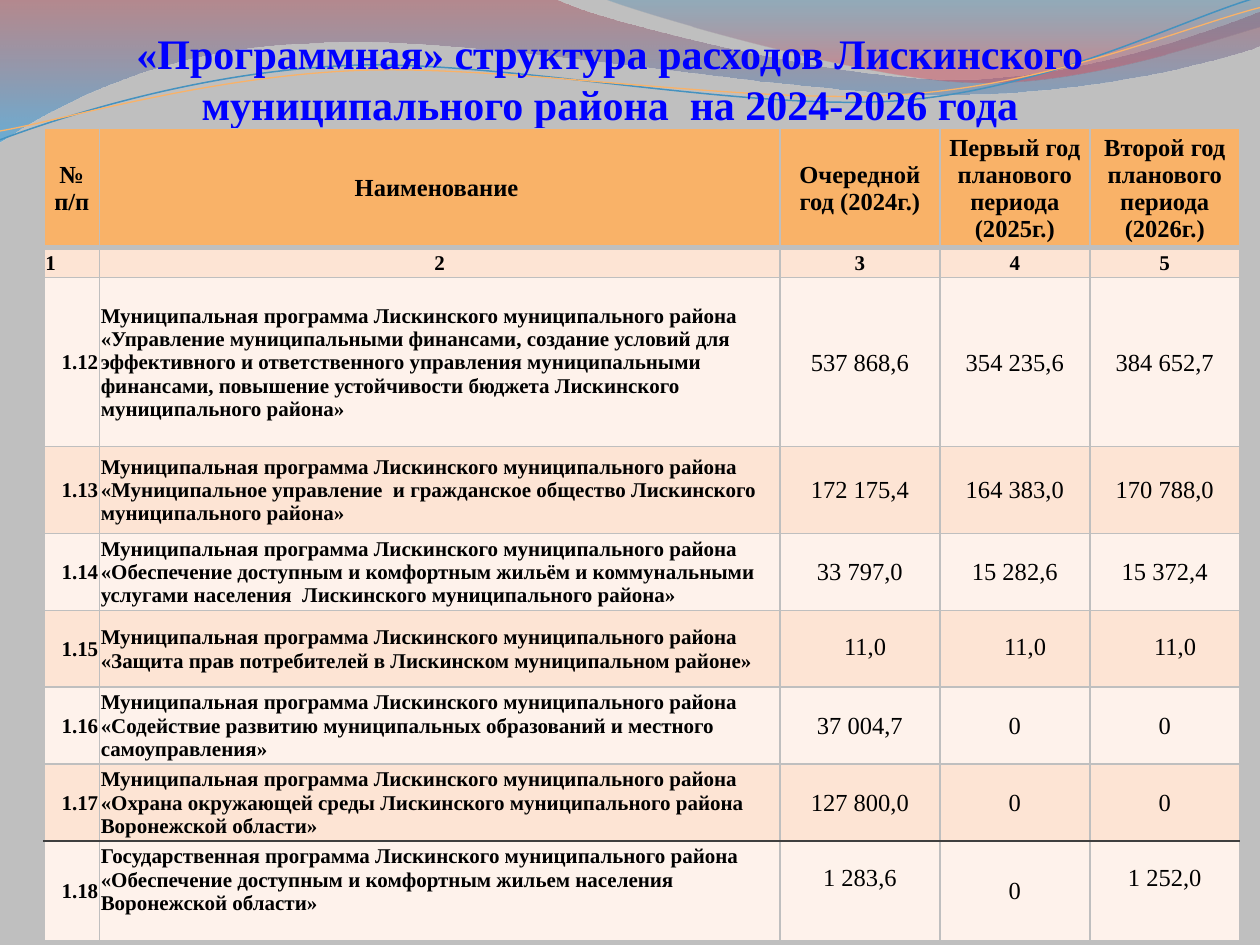
import pptx
import pptx.util
import pptx.dml.color
import pptx.enum.text
import pptx.oxml
import pptx.oxml.ns
from lxml import etree

Inches = pptx.util.Inches
Pt = pptx.util.Pt
RGB = pptx.dml.color.RGBColor
Align = pptx.enum.text.PP_ALIGN
Anchor = pptx.enum.text.MSO_ANCHOR
qn = pptx.oxml.ns.qn

GREY = RGB(0xBF, 0xBF, 0xBF)
DARK = RGB(0x3F, 0x3F, 0x3F)
BLACK = RGB(0, 0, 0)
BLUE = RGB(0, 0, 0xFF)
ORANGE = RGB(0xF9, 0xB2, 0x68)
PEACH = RGB(0xFD, 0xE4, 0xD4)
CREAM = RGB(0xFE, 0xF2, 0xEB)
ROSE = RGB(0xA8, 0x47, 0x52)
SKY = RGB(0x24, 0x9F, 0xE6)
SEA = RGB(0x2A, 0x7E, 0xAF)
RED = RGB(0xD2, 0x4B, 0x5A)
STEEL = RGB(0x45, 0x92, 0xBF)
FONT = "Times New Roman"


def write(frame, text, size=12, bold=True, color=BLACK, align=Align.LEFT):
    par = frame.paragraphs[0]
    par.alignment = align
    run = par.add_run()
    run.text = text
    run.font.name = FONT
    run.font.size = Pt(size)
    run.font.bold = bold
    run.font.color.rgb = color


class Deck:
    def __init__(self, wide, high):
        self.show = pptx.Presentation()
        self.show.slide_width = Inches(wide)
        self.show.slide_height = Inches(high)
        self.slide = self.show.slides.add_slide(self.show.slide_layouts[6])
        self.slide.background.fill.solid()
        self.slide.background.fill.fore_color.rgb = GREY

    def outline(self, start, parts, close):
        """Draw lines (2 numbers) and cubic curves (6 numbers) from start."""
        dots = [(Inches(p[i]), Inches(p[i + 1])) for p in parts for i in range(0, len(p), 2)]
        pen = self.slide.shapes.build_freeform(*map(Inches, start), scale=1.0)
        pen.add_line_segments(dots, close=close)
        shape = pen.convert_to_shape()
        shape.shadow.inherit = False
        # Join each three points of a curve into one segment
        legs = iter(list(shape._element.iter(qn("a:lnTo"))))
        for part in parts:
            first = next(legs)
            if len(part) == 6:
                first.tag = qn("a:cubicBezTo")
                for _ in range(2):
                    leg = next(legs)
                    first.append(leg[0])
                    leg.getparent().remove(leg)
        return shape

    def wave(self, start, parts, stops):
        shape = self.outline(start, parts, True)
        shape.line.fill.background()
        shape.fill.gradient()
        shape.fill.gradient_angle = 270
        for stop, (place, color, alpha) in zip(shape.fill.gradient_stops, stops):
            stop.position = place
            stop.color.rgb = color
        tags = list(shape._element.spPr.iter(qn("a:srgbClr")))
        for tag, (_, _, alpha) in zip(tags, stops):
            etree.SubElement(tag, qn("a:alpha")).set("val", str(alpha * 1000))

    def curve(self, start, parts, color, width):
        shape = self.outline(start, parts, False)
        shape.fill.background()
        shape.line.color.rgb = color
        shape.line.width = Pt(width)

    def title(self, text, left, top, wide, high):
        box = self.slide.shapes.add_textbox(*map(Inches, (left, top, wide, high)))
        frame = box.text_frame
        frame.word_wrap = True
        frame.vertical_anchor = Anchor.BOTTOM
        frame.margin_left = frame.margin_right = frame.margin_bottom = 0
        write(frame, text, size=24, color=BLUE, align=Align.CENTER)

    def grid(self, left, top, cols, rows):
        size = map(Inches, (left, top, sum(cols), sum(rows)))
        table = self.slide.shapes.add_table(len(rows), len(cols), *size).table
        table.first_row = table.horz_banding = False
        for col, wide in zip(table.columns, cols):
            col.width = Inches(wide)
        for row, high in zip(table.rows, rows):
            row.height = Inches(high)
        return table

    def cell(self, cell, text, fill, edges, left=0.01, low=0, anchor=Anchor.MIDDLE, **look):
        cell.margin_left = Inches(left)
        cell.margin_top = cell.margin_right = Inches(0.01)
        cell.margin_bottom = Inches(low)
        cell.vertical_anchor = anchor
        write(cell.text_frame, text, **look)
        cell.fill.solid()
        cell.fill.fore_color.rgb = fill
        props = cell._tc.get_or_add_tcPr()
        for i, side in enumerate("LRTB"):
            color, width = edges.get(side, (GREY, 1))
            props.insert(i, pptx.oxml.parse_xml(
                f'<a:ln{side} {pptx.oxml.ns.nsdecls("a")} w="{Pt(width)}"><a:solidFill>'
                f'<a:srgbClr val="{color}"/></a:solidFill></a:ln{side}>'))


HEAD = ["№ п/п", "Наименование ", "Очередной год (2024г.)",
        "Первый год планового периода (2025г.)", "Второй год планового периода (2026г.)"]
LOCAL = "Муниципальная программа Лискинского муниципального района "
STATE = "Государственная программа Лискинского муниципального района "
PLANS = [
    (LOCAL + "«Управление муниципальными финансами, создание условий для эффективного и "
     "ответственного управления муниципальными финансами, повышение устойчивости бюджета "
     "Лискинского муниципального района»", "537 868,6", "354 235,6", "384 652,7"),
    (LOCAL + "«Муниципальное управление  и гражданское общество Лискинского муниципального "
     "района»", "172 175,4", "164 383,0", "170 788,0"),
    (LOCAL + "«Обеспечение доступным и комфортным жильём и коммунальными услугами населения  "
     "Лискинского муниципального района»", "33 797,0", "15 282,6", "15 372,4"),
    (LOCAL + "«Защита прав потребителей в Лискинском муниципальном районе»",
     "11,0", "11,0", "11,0"),
    (LOCAL + "«Содействие развитию муниципальных образований и местного самоуправления»",
     "37 004,7", "0", "0"),
    (LOCAL + "«Охрана окружающей среды Лискинского муниципального района Воронежской области»",
     "127 800,0", "0", "0"),
    (STATE + "«Обеспечение доступным и комфортным жильем населения Воронежской области»",
     "1 283,6", "0", "1 252,0"),
]
COLS = [0.44, 5.4, 1.27, 1.19, 1.19]
ROWS = [0.88, 0.24, 1.34, 0.69, 0.61, 0.61, 0.5, 0.5, 0.7]


def main():
    deck = Deck(10, 7.5)

    # Waves and thin curves along the top
    deck.wave((0, 0), [(4.4, -0.01), (4.76, 0.17, 6.64, 0.63, 7.58, 0.63),
                       (8.53, 0.63, 9.58, 0.26, 10, 0.09), (10.01, 0.36),
                       (9.83, 0.44, 8.7, 0.76, 7.46, 0.75),
                       (6.22, 0.75, 3.82, 0.28, 2.57, 0.34),
                       (1.29, 0.36, 0.46, 0.83, -0.01, 1.13)],
              [(0, ROSE, 45), (1, SKY, 55)])
    deck.wave((4.79, -0.01), [(5.09, 0.11, 6.82, 0.62, 7.69, 0.65),
                              (8.56, 0.69, 9.61, 0.32, 10, 0.21), (10, 0)],
              [(0, SEA, 30), (0.8, RED, 45)])
    deck.curve((0, 1.11), [(0.48, 0.93, 1.58, 0.57, 2.77, 0.52),
                           (3.95, 0.47, 5.93, 0.89, 7.13, 0.8),
                           (8.33, 0.71, 9.38, 0.15, 9.98, -0.02)], STEEL, 0.85)
    deck.curve((0, 1.04), [(0.47, 0.96, 1.64, 0.61, 2.83, 0.56),
                           (4.03, 0.51, 5.97, 0.84, 7.17, 0.75),
                           (8.36, 0.67, 9.41, 0.21, 10, 0.06)], ORANGE, 0.75)

    # Title
    deck.title("«Программная» структура расходов Лискинского муниципального района  "
               "на 2024-2026 года", 0.23, 0.24, 9.22, 0.78)

    # Table heading and column numbers
    table = deck.grid(0.35, 1.02, COLS, ROWS)
    thick = (GREY, 3)
    for c, text in enumerate(HEAD):
        deck.cell(table.cell(0, c), text, ORANGE, {"B": thick}, size=14, align=Align.CENTER)
        deck.cell(table.cell(1, c), str(c + 1), PEACH, {"T": thick},
                  align=Align.CENTER if c else Align.LEFT)

    # Programmes, with a dark rule above the last one
    last = len(PLANS) - 1
    rule = (DARK, 1)
    for i, (name, *sums) in enumerate(PLANS):
        r = i + 2
        fill = PEACH if i % 2 else CREAM
        edges = {last - 1: {"B": rule}, last: {"T": rule}}.get(i, {})
        deck.cell(table.cell(r, 0), f"1.{i + 12}", fill, edges, align=Align.RIGHT)
        deck.cell(table.cell(r, 1), name, fill, edges, low=0.18 if i == last else 0)
        for c, text in enumerate(sums, 2):
            look = {"align": Align.CENTER}
            if text == "11,0":
                look = {"left": 0.51, "low": 0.21, "anchor": Anchor.BOTTOM}
            elif i == last and text != "0":
                look["low"] = 0.21
            deck.cell(table.cell(r, c), text, fill, edges, size=14, bold=False, **look)

    deck.show.save("out.pptx")


if __name__ == "__main__":
    main()
